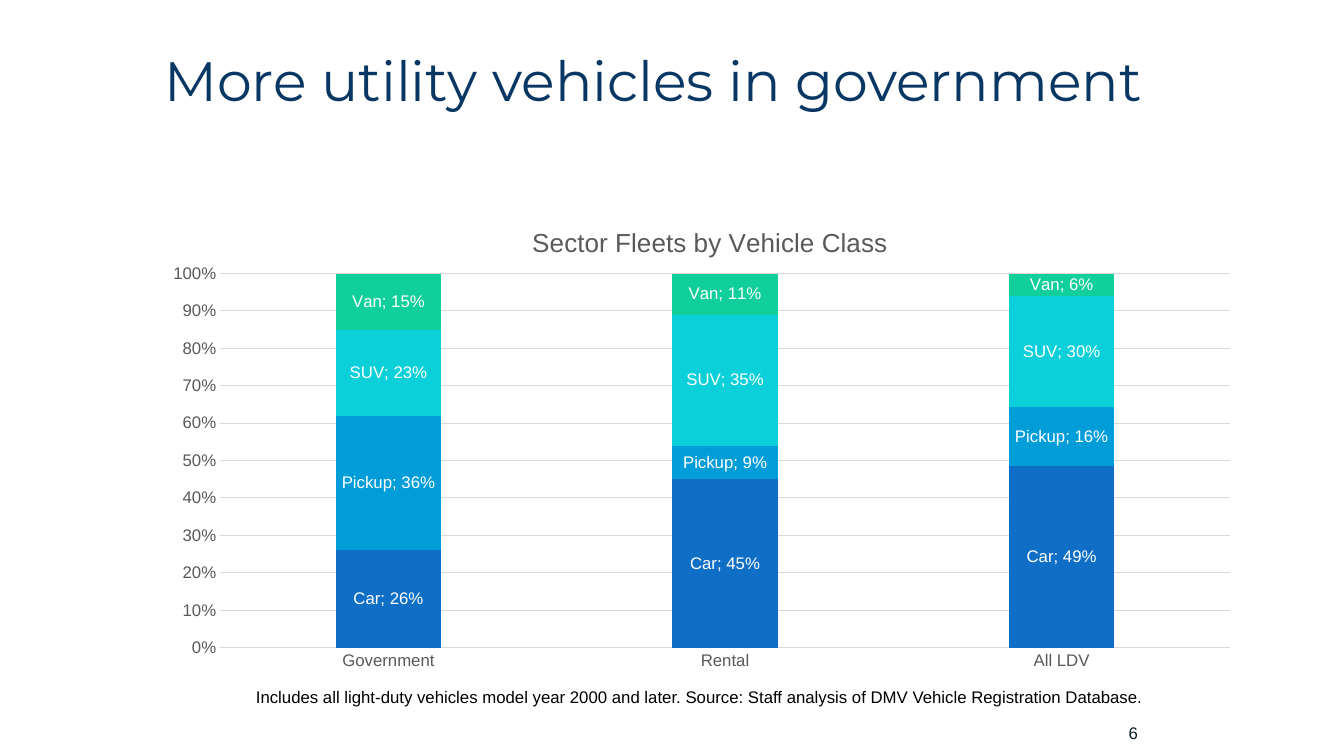
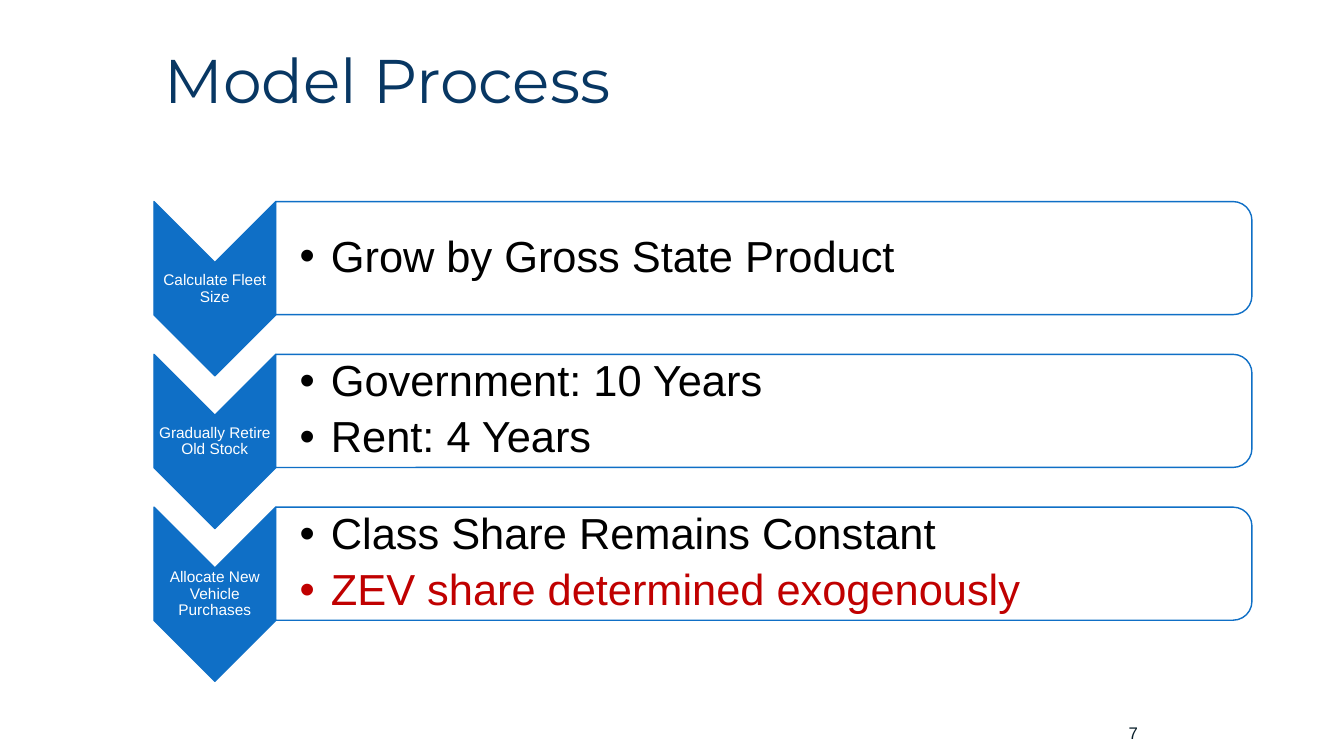
from lxml import etree
from pptx import Presentation
from pptx.chart.data import CategoryChartData
from pptx.dml.color import RGBColor
from pptx.enum.chart import XL_CHART_TYPE, XL_LABEL_POSITION, XL_TICK_MARK
from pptx.enum.shapes import MSO_SHAPE
from pptx.enum.text import MSO_ANCHOR, PP_ALIGN
from pptx.oxml.ns import qn
from pptx.util import Cm, Pt

STACKED = XL_CHART_TYPE.COLUMN_STACKED_100
LABEL_CENTER = XL_LABEL_POSITION.CENTER
NO_TICK = XL_TICK_MARK.NONE
CHEVRON, PANEL = MSO_SHAPE.CHEVRON, MSO_SHAPE.ROUND_2_SAME_RECTANGLE
TOP, MIDDLE = MSO_ANCHOR.TOP, MSO_ANCHOR.MIDDLE
LEFT, CENTER, RIGHT = PP_ALIGN.LEFT, PP_ALIGN.CENTER, PP_ALIGN.RIGHT

COLORS = {
    "title": "083763", "number": "071D28", "text": "000000", "white": "FFFFFF",
    "alert": "C00000", "axis": "595959", "grid": "D9D9D9", "blue": "0F6FC6",
    "sky": "009DD9", "cyan": "0BD0D9", "green": "10CF9B",
}
BODY_FONT, TITLE_FONT = "Arial", "Montserrat"

# Frame and paragraph settings for each kind of text
TITLE = {"frame": {"vertical_anchor": MIDDLE, "word_wrap": True},
         "paragraph": {"alignment": LEFT, "line_spacing": 0.9}}
NUMBER = {"frame": {"vertical_anchor": MIDDLE, "word_wrap": True},
          "paragraph": {"alignment": RIGHT}}
NOTE = {"frame": {"vertical_anchor": TOP, "word_wrap": False},
        "paragraph": {"alignment": LEFT}}
STEP = {"frame": {"vertical_anchor": MIDDLE, "word_wrap": True,
                  "margin_left": Cm(0.03), "margin_right": Cm(0.03),
                  "margin_top": Cm(0.03), "margin_bottom": Cm(0.03)},
        "paragraph": {"alignment": CENTER, "line_spacing": 0.9}}
DETAIL = {"frame": {"vertical_anchor": MIDDLE, "word_wrap": True,
                    "margin_left": Cm(0.6), "margin_right": Cm(0.05),
                    "margin_top": Cm(0.05), "margin_bottom": Cm(0.05)},
          "paragraph": {"alignment": LEFT, "line_spacing": 0.9,
                        "space_after": Pt(6.5)},
          "bullet": Cm(0.79)}

SECTORS = ["Government", "Rental", "All LDV"]
CLASSES = [
    ("Car", "blue", (0.26, 0.45, 0.49)),
    ("Pickup", "sky", (0.36, 0.09, 0.16)),
    ("SUV", "cyan", (0.23, 0.35, 0.30)),
    ("Van", "green", (0.15, 0.11, 0.06)),
]
PROCESS = [
    ("Calculate Fleet Size", [("Grow by Gross State Product", "text")]),
    ("Gradually Retire Old Stock",
     [("Government: 10 Years", "text"), ("Rent: 4 Years", "text")]),
    ("Allocate New Vehicle Purchases",
     [("Class Share Remains Constant", "text"),
      ("ZEV share determined exogenously", "alert")]),
]


def rgb(color):
    return RGBColor.from_string(COLORS[color])


def set_all(target, values):
    for name, value in values.items():
        setattr(target, name, value)


def set_font(font, size, color, name=BODY_FONT):
    set_all(font, {"size": Pt(size), "name": name, "bold": False})
    font.color.rgb = rgb(color)


def add_bullet(paragraph, indent):
    properties = paragraph._p.get_or_add_pPr()
    properties.set("marL", str(indent))
    properties.set("indent", str(-indent))
    etree.SubElement(properties, qn("a:buFont")).set("typeface", BODY_FONT)
    etree.SubElement(properties, qn("a:buChar")).set("char", "•")


def add_text(slide, box, lines, size, style, font=BODY_FONT):
    """Place (text, color) lines in a box given in centimetres."""
    frame = slide.shapes.add_textbox(*map(Cm, box)).text_frame
    set_all(frame, style["frame"])
    for index, (text, color) in enumerate(lines):
        paragraph = frame.add_paragraph() if index else frame.paragraphs[0]
        if "bullet" in style:
            add_bullet(paragraph, style["bullet"])
        set_all(paragraph, style["paragraph"])
        run = paragraph.add_run()
        run.text = text
        set_font(run.font, size, color, font)


def add_turned(slide, preset, box, fill):
    """Draw a shape turned by 90 degrees so that it covers the given box."""
    left, top, width, height = box
    shift = (width - height) / 2
    shape = slide.shapes.add_shape(
        preset, Cm(left + shift), Cm(top - shift), Cm(height), Cm(width))
    shape.rotation = 90
    shape.shadow.inherit = False
    shape.fill.solid()
    shape.fill.fore_color.rgb = rgb(fill)
    shape.line.color.rgb = rgb("blue")
    shape.line.width = Pt(1)
    return shape


def set_opacity(shape, percent):
    color = shape._element.spPr.find(qn("a:solidFill"))[0]
    etree.SubElement(color, qn("a:alpha")).set("val", str(percent * 1000))


def set_layout(parent, values):
    """Fix a chart part at fractions of the chart area."""
    layout = parent.find(qn("c:layout"))
    if layout is None:
        layout = etree.Element(qn("c:layout"))
        parent.insert(0, layout)
    manual = etree.SubElement(layout, qn("c:manualLayout"))
    for tag, value in values.items():
        etree.SubElement(manual, qn("c:" + tag)).set("val", str(value))


def style_axes(chart):
    for axis in (chart.category_axis, chart.value_axis):
        set_all(axis, {"major_tick_mark": NO_TICK, "minor_tick_mark": NO_TICK})
        set_font(axis.tick_labels.font, 12, "axis")
    values = chart.value_axis
    set_all(values, {"minimum_scale": 0, "maximum_scale": 1, "major_unit": 0.1,
                     "has_major_gridlines": True})
    set_all(values.tick_labels,
            {"number_format": "0%", "number_format_is_linked": False})
    values.format.line.fill.background()
    for line in (chart.category_axis.format.line, values.major_gridlines.format.line):
        line.color.rgb = rgb("grid")
        line.width = Pt(0.75)


def style_series(series, color):
    series.format.fill.solid()
    series.format.fill.fore_color.rgb = rgb(color)
    labels = series.data_labels
    set_all(labels, {"show_value": True, "show_series_name": True,
                     "number_format": "0%", "number_format_is_linked": False,
                     "position": LABEL_CENTER})
    set_font(labels.font, 12, "white")
    separator = etree.Element(qn("c:separator"))
    separator.text = "; "
    labels._element.find(qn("c:showBubbleSize")).addnext(separator)


def add_fleet_chart(slide, box):
    data = CategoryChartData(number_format="0%")
    data.categories = SECTORS
    for name, _, shares in CLASSES:
        data.add_series(name, shares)
    chart = slide.shapes.add_chart(STACKED, *map(Cm, box), data).chart
    set_font(chart.font, 10, "text")
    set_all(chart, {"has_legend": False, "has_title": True})

    # Chart title
    heading = chart.chart_title.text_frame
    heading.text = "Sector Fleets by Vehicle Class"
    set_font(heading.paragraphs[0].runs[0].font, 18.6, "axis")
    set_layout(chart.chart_title._element,
               {"xMode": "edge", "yMode": "edge", "x": 0.34, "y": 0.04})

    # Plot
    plot = chart.plots[0]
    set_all(plot, {"gap_width": 219, "overlap": 100, "vary_by_categories": False})
    set_layout(chart._chartSpace.chart.plotArea,
               {"layoutTarget": "inner", "xMode": "edge", "yMode": "edge",
                "x": 0.06, "y": 0.15, "w": 0.92, "h": 0.78})
    style_axes(chart)
    for series, (_, color, _) in zip(plot.series, CLASSES):
        style_series(series, color)


def add_step(slide, top, step, details):
    arrow_left, arrow_width, arrow_height = 3.88, 3.07, 4.39
    panel_left, panel_width, panel_height = 6.95, 24.6, 2.85
    label_height = 1.32
    add_turned(slide, CHEVRON, (arrow_left, top, arrow_width, arrow_height), "blue")
    panel = add_turned(
        slide, PANEL, (panel_left, top, panel_width, panel_height), "white")
    set_opacity(panel, 90)
    label_top = top + (arrow_height - label_height) / 2
    add_text(slide, (arrow_left, label_top, arrow_width, label_height),
             [(step, "white")], 11, STEP)
    add_text(slide, (panel_left, top, panel_width, panel_height),
             details, 31, DETAIL)


def add_slide(prs, title, title_size, number):
    """Start a slide with the shared title and page number."""
    slide = prs.slides.add_slide(prs.slide_layouts[6])
    add_text(slide, (23.93, 17.96, 5, 1.02), [(str(number), "number")], 12, NUMBER)
    add_text(slide, (3.89, 0.66, 27.66, 2.9), [(title, "title")],
             title_size, TITLE, TITLE_FONT)
    return slide


def main():
    prs = Presentation()
    prs.slide_width, prs.slide_height = Cm(33.87), Cm(19.05)

    # Fleet shares
    fleets = add_slide(prs, "More utility vehicles in government", 39.6, 6)
    add_fleet_chart(fleets, (3.89, 5.08, 27.66, 12.09))
    source = ("Includes all light-duty vehicles model year 2000 and later. "
              "Source: Staff analysis of DMV Vehicle Registration Database.")
    add_text(fleets, (6.2, 17.17, 23.04, 0.76), [(source, "text")], 12, NOTE)

    # Model steps
    model = add_slide(prs, "Model Process", 44, 7)
    first_top, pitch = 5.08, 3.85
    for index, (step, details) in enumerate(PROCESS):
        add_step(model, first_top + index * pitch, step, details)

    prs.save("out.pptx")


if __name__ == "__main__":
    main()
